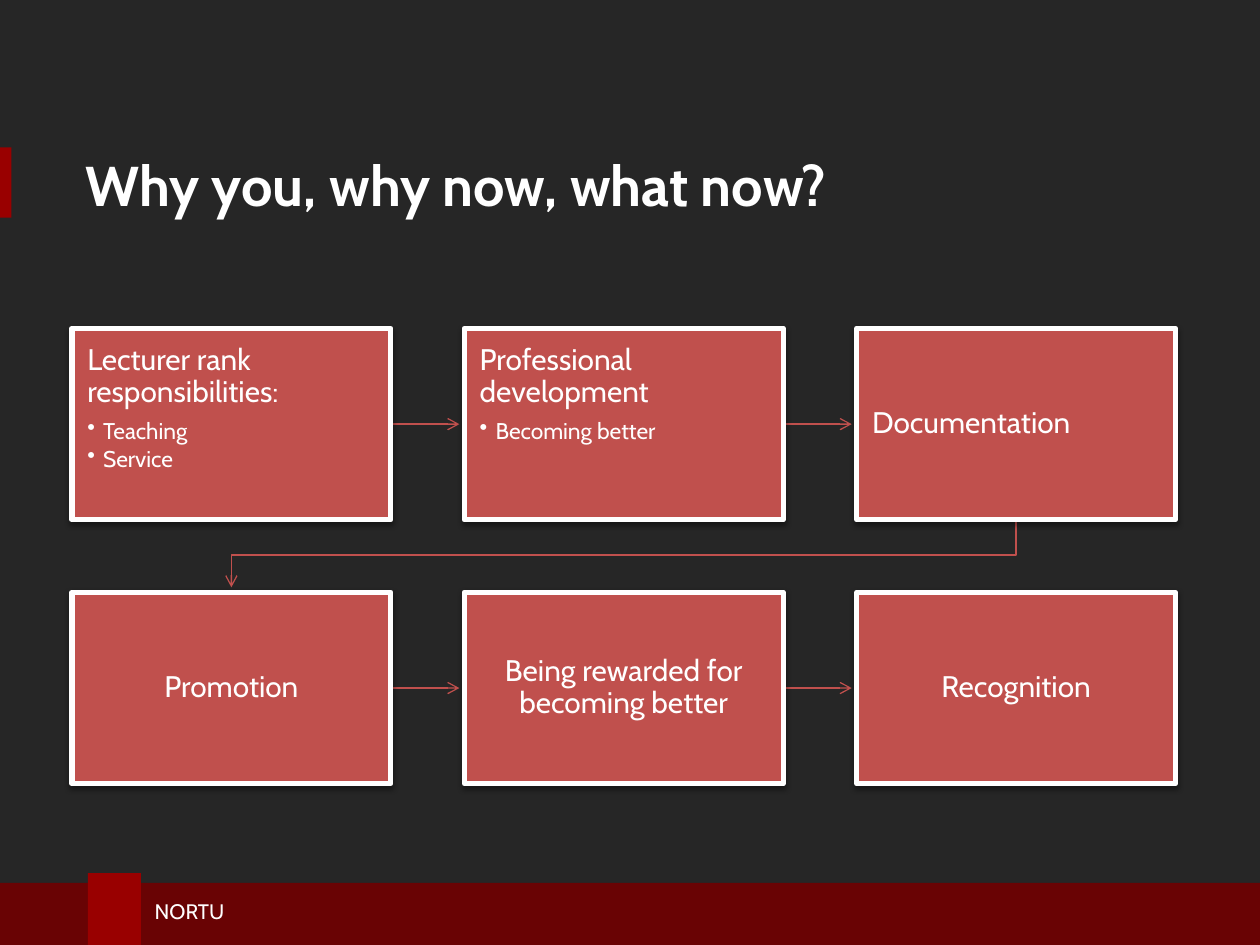
from pptx import Presentation
from pptx.dml.color import RGBColor
from pptx.enum.shapes import MSO_CONNECTOR, MSO_SHAPE
from pptx.enum.text import MSO_ANCHOR as Anchor, PP_ALIGN as Align
from pptx.oxml import parse_xml
from pptx.oxml.ns import nsdecls, qn
from pptx.util import Cm, Pt
from lxml.etree import SubElement

FONT = "Cabin"
COLORS = {"back": "262626", "band": "690304", "mark": "990000",
          "card": "C0504D", "text": "FFFFFF"}
# Each row: heading, bullets, alignment, anchor
CARDS = [
    [("Lecturer rank responsibilities:", ["Teaching", "Service"], Align.LEFT, Anchor.TOP),
     ("Professional development", ["Becoming better"], Align.LEFT, Anchor.TOP),
     ("Documentation", [], Align.LEFT, Anchor.MIDDLE)],
    [(text, [], Align.CENTER, Anchor.MIDDLE)
     for text in ("Promotion", "Being rewarded for becoming better", "Recognition")],
]


def color(name):
    return RGBColor.from_string(COLORS[name])


def add_rect(slide, x, y, w, h, fill):
    rect = slide.shapes.add_shape(MSO_SHAPE.RECTANGLE, Cm(x), Cm(y), Cm(w), Cm(h))
    rect.shadow.inherit = False
    rect.fill.solid()
    rect.fill.fore_color.rgb = color(fill)
    rect.line.fill.background()
    return rect


def style(para, size, bold=False):
    para.font.name = FONT
    para.font.size = Pt(size)
    para.font.bold = bold
    para.font.color.rgb = color("text")


def add_label(slide, text, x, y, w, h, size, bold=False):
    frame = slide.shapes.add_textbox(Cm(x), Cm(y), Cm(w), Cm(h)).text_frame
    frame.word_wrap = True
    frame.vertical_anchor = Anchor.MIDDLE
    frame.text = text
    style(frame.paragraphs[0], size, bold)


def add_bullet(para):
    props = para._p.get_or_add_pPr()
    props.set("marL", str(Cm(0.32)))
    props.set("indent", str(-Cm(0.32)))
    SubElement(props, qn("a:buChar"), char="•")


def add_shadow(shape):
    effects = shape._element.spPr.find(qn("a:effectLst"))
    effects.append(parse_xml(
        f'<a:outerShdw {nsdecls("a")} blurRad="{Pt(3.1)}" dist="{Pt(1.6)}" '
        'dir="5400000" rotWithShape="0"><a:srgbClr val="000000">'
        '<a:alpha val="38000"/></a:srgbClr></a:outerShdw>'))


def add_card(slide, x, y, w, h, card):
    head, items, align, anchor = card
    box = add_rect(slide, x, y, w, h, "card")
    box.line.color.rgb = color("text")
    box.line.width = Pt(3)
    add_shadow(box)
    frame = box.text_frame
    frame.word_wrap = True
    frame.vertical_anchor = anchor
    frame.margin_left = frame.margin_right = Cm(0.31)
    frame.margin_top = frame.margin_bottom = Cm(0.33)
    frame.text = "\n".join([head, *items])
    for i, para in enumerate(frame.paragraphs):
        style(para, 13 if i else 17)
        para.alignment = align
        para.line_spacing = 0.9
        para.space_after = Pt(2 if i else 6)
        if i:
            para.level = 1
            add_bullet(para)


def style_arrow(arrow):
    arrow.line.color.rgb = color("card")
    arrow.line.width = Pt(0.75)
    SubElement(arrow.line._get_or_add_ln(), qn("a:tailEnd"), type="arrow")


def add_arrow(slide, x, y, end):
    arrow = slide.shapes.add_connector(MSO_CONNECTOR.STRAIGHT, Cm(x), Cm(y), Cm(end), Cm(y))
    style_arrow(arrow)
    SubElement(arrow._element.spPr, qn("a:effectLst"))


def add_turn(slide, x, y, end_x, end_y):
    """Arrow from the end of one row back to the start of the next."""
    mid = (y + end_y) / 2 + 0.03
    path = slide.shapes.build_freeform(Cm(x), Cm(y))
    path.add_line_segments([(Cm(x), Cm(mid)), (Cm(end_x), Cm(mid)),
                            (Cm(end_x), Cm(end_y))], close=False)
    turn = path.convert_to_shape()
    turn.fill.background()
    turn.shadow.inherit = False
    style_arrow(turn)


def add_flow(slide, x, y, w, h):
    wide, high, gap = 6.43, 3.86, 0.1
    step_x, step_y = (w - wide) / 2, h - high
    for row, cards in enumerate(CARDS):
        top = y + row * step_y
        for col, card in enumerate(cards):
            left = x + col * step_x
            if col < len(cards) - 1:
                add_arrow(slide, left + wide, top + high / 2, left + step_x - gap)
            elif row < len(CARDS) - 1:
                add_turn(slide, left + wide / 2, top + high,
                         x + wide / 2, top + step_y - gap)
            add_card(slide, left, top, wide, high, card)


def add_title(slide, x, y, w, h):
    add_rect(slide, x, y + 0.15, 0.23, 1.42, "mark")
    add_label(slide, "Why you, why now, what now?", x + 1.47, y, w - 1.47, h, 32, True)


def add_footer(slide, x, y, w, h):
    add_rect(slide, x, y, w, h, "band")
    add_rect(slide, x + 1.77, y - 0.2, 1.07, h + 0.2, "mark")
    add_label(slide, "NORTU", x + 2.87, y + 0.18, 10.03, 0.76, 12)


def main():
    deck = Presentation()
    deck.slide_width, deck.slide_height = Cm(25.4), Cm(19.05)
    slide = deck.slides.add_slide(deck.slide_layouts[6])
    slide.background.fill.solid()
    slide.background.fill.fore_color.rgb = color("back")
    add_footer(slide, 0, 17.8, 25.4, 1.25)
    add_title(slide, 0, 2.82, 23.7, 1.78)
    add_flow(slide, 1.45, 6.62, 22.25, 9.18)
    deck.save("out.pptx")


if __name__ == "__main__":
    main()
